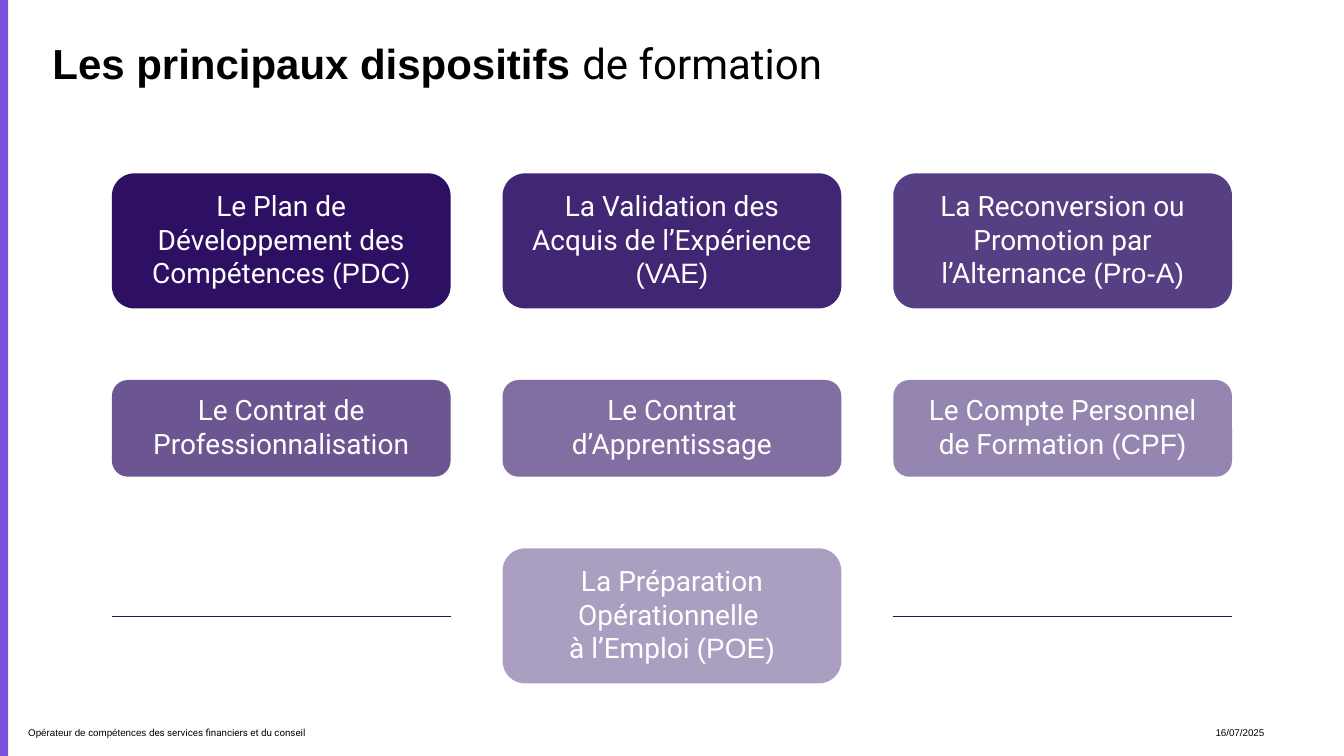
from lxml import etree
from pptx import Presentation
from pptx.dml.color import RGBColor
from pptx.enum.shapes import MSO_CONNECTOR, MSO_SHAPE
from pptx.enum.text import MSO_ANCHOR, MSO_AUTO_SIZE, PP_ALIGN
from pptx.oxml.ns import qn
from pptx.util import Inches, Pt

STRAIGHT = MSO_CONNECTOR.STRAIGHT
RECTANGLE, ROUNDED = MSO_SHAPE.RECTANGLE, MSO_SHAPE.ROUNDED_RECTANGLE
TOP, MIDDLE = MSO_ANCHOR.TOP, MSO_ANCHOR.MIDDLE
LEFT, CENTER, RIGHT = PP_ALIGN.LEFT, PP_ALIGN.CENTER, PP_ALIGN.RIGHT
GROW, FIXED = MSO_AUTO_SIZE.SHAPE_TO_FIT_TEXT, MSO_AUTO_SIZE.NONE

WHITE, BLACK, INDIGO, VIOLET = "FFFFFF", "000000", "2D0F64", "7850DC"
HEADING_FONT, BODY_FONT = "Arial", "Roboto"

BOX_WIDTH = 3.36
FIRST_LEFT, COLUMN_PITCH = 1.11, 3.875
FIRST_MIDDLE, ROW_PITCH = 2.39, 1.86
ROW_HEIGHTS = (1.34, 0.96, 1.34)

# (row, column, name, acronym)
SCHEMES = (
    (0, 0, "Le Plan de Développement des Compétences ", "(PDC)"),
    (0, 1, "La Validation des Acquis de l’Expérience ", "(VAE)"),
    (0, 2, "La Reconversion ou Promotion par l’Alternance ", "(Pro-A)"),
    (1, 0, "Le Contrat de Professionnalisation", ""),
    (1, 1, "Le Contrat d’Apprentissage", ""),
    (1, 2, "Le Compte Personnel de Formation ", "(CPF)"),
    (2, 1, "La Préparation Opérationnelle \nà l’Emploi ", "(POE)"),
)


def color(value):
    return RGBColor.from_string(value)


def column_left(column):
    return FIRST_LEFT + column * COLUMN_PITCH


def row_middle(row):
    return FIRST_MIDDLE + row * ROW_PITCH


def write_text(shape, runs, size, ink=BLACK, align=LEFT, anchor=MIDDLE,
               insets=(0, 0, 0, 0), auto_size=FIXED):
    """Fill a shape with one paragraph of (text, font, bold) runs."""
    frame = shape.text_frame
    frame.word_wrap = True
    frame.auto_size = auto_size
    frame.vertical_anchor = anchor
    (frame.margin_left, frame.margin_top,
     frame.margin_right, frame.margin_bottom) = map(Inches, insets)
    paragraph = frame.paragraphs[0]
    paragraph.alignment = align
    for text, font_name, bold in runs:
        for index, line in enumerate(text.split("\n")):
            if index:
                paragraph.add_line_break()
            run = paragraph.add_run()
            run.text = line
            run.font.name = font_name
            run.font.size = Pt(size)
            run.font.bold = bold
            run.font.color.rgb = color(ink)


def add_text(slide, left, top, width, height, runs, size, **text_format):
    box = slide.shapes.add_textbox(
        Inches(left), Inches(top), Inches(width), Inches(height))
    write_text(box, runs, size, **text_format)


def add_block(slide, kind, left, top, width, height, fill, opacity=100):
    shape = slide.shapes.add_shape(
        kind, Inches(left), Inches(top), Inches(width), Inches(height))
    shape.shadow.inherit = False
    shape.line.fill.background()
    shape.fill.solid()
    shape.fill.fore_color.rgb = color(fill)
    if opacity < 100:
        fill_color = next(shape.fill._xPr.iter(qn("a:srgbClr")))
        alpha = etree.SubElement(fill_color, qn("a:alpha"))
        alpha.set("val", str(opacity * 1000))
    return shape


def add_scheme(slide, row, column, name, acronym, opacity):
    height = ROW_HEIGHTS[row]
    box = add_block(slide, ROUNDED, column_left(column),
                    row_middle(row) - height / 2, BOX_WIDTH, height,
                    INDIGO, opacity)
    runs = [(name, BODY_FONT, False)]
    if acronym:
        runs.append((acronym, HEADING_FONT, False))
    write_text(box, runs, 20, ink=WHITE, align=CENTER,
               insets=(0.12, 0.08, 0.12, 0.12), auto_size=GROW)


def add_side_line(slide, column):
    left, middle = column_left(column), Inches(row_middle(2))
    line = slide.shapes.add_connector(
        STRAIGHT, Inches(left), middle, Inches(left + BOX_WIDTH), middle)
    line.line.color.rgb = color(INDIGO)
    line.line.width = Pt(0.5)
    etree.SubElement(line._element.spPr, qn("a:effectLst"))


def main():
    presentation = Presentation()
    presentation.slide_width = Inches(13.33)
    presentation.slide_height = Inches(7.5)
    slide = presentation.slides.add_slide(presentation.slide_layouts[6])

    add_block(slide, RECTANGLE, 0, 0, 0.08, 7.5, VIOLET)
    for index, scheme in enumerate(SCHEMES):
        add_scheme(slide, *scheme, opacity=100 - 10 * index)
    for column in (0, 2):
        add_side_line(slide, column)

    add_text(slide, 0.52, 0.37, 8.57, 0.5,
             [("Les principaux dispositifs ", HEADING_FONT, True),
              ("de formation", BODY_FONT, False)],
             30, anchor=TOP, auto_size=GROW)
    add_text(slide, 0.08, 7.1, 7.02, 0.33,
             [("Opérateur de compétences ", HEADING_FONT, False),
              ("des services financiers et du conseil", BODY_FONT, False)],
             7, insets=(0.2, 0, 0, 0))
    add_text(slide, 11.54, 7.1, 1, 0.33,
             [("16/07/2025", HEADING_FONT, False)],
             7, align=RIGHT, insets=(0.2, 0, 0, 0))

    presentation.save("out.pptx")


if __name__ == "__main__":
    main()
